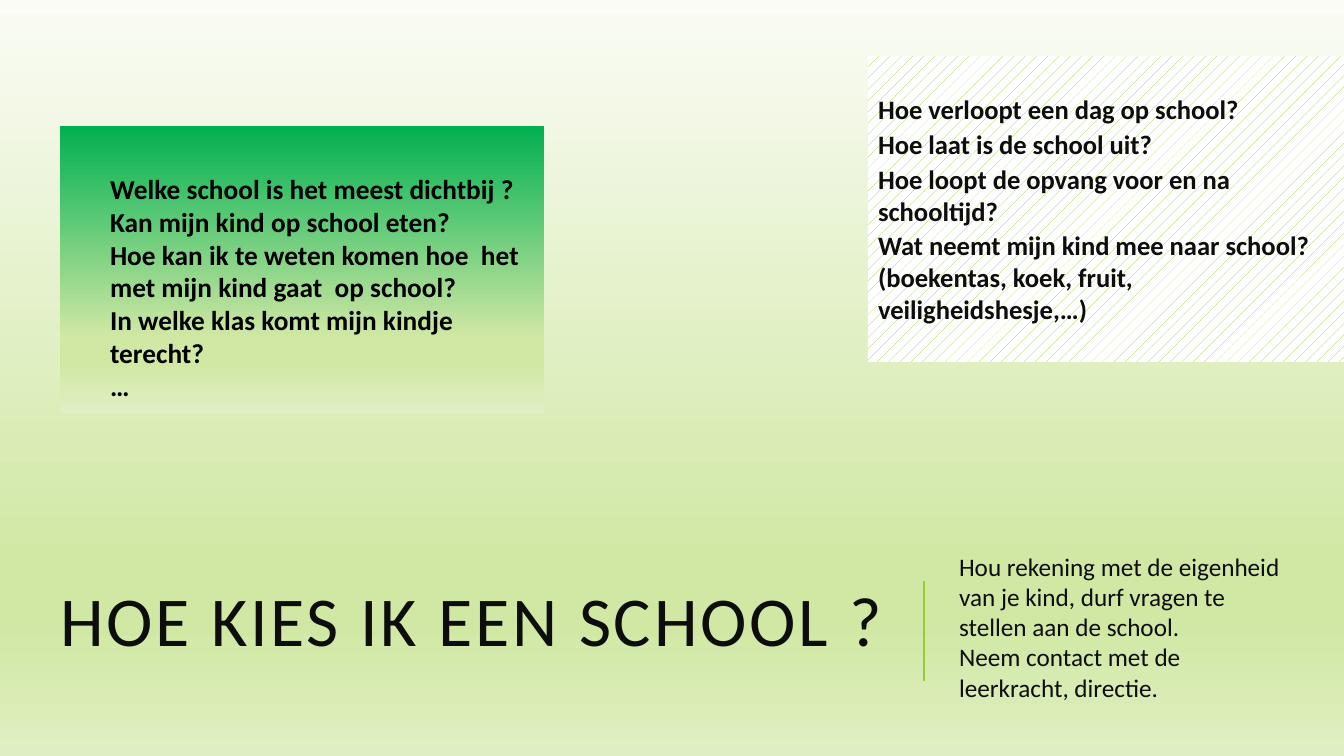
from dataclasses import dataclass

from pptx import Presentation
from pptx.dml.color import RGBColor
from pptx.enum.dml import MSO_PATTERN
from pptx.enum.shapes import MSO_CONNECTOR
from pptx.enum.text import MSO_ANCHOR, MSO_AUTO_SIZE, PP_ALIGN
from pptx.oxml.ns import qn
from pptx.util import Emu, Pt
from lxml.etree import SubElement


@dataclass(frozen=True)
class Theme:
    face: str = "Calibri"
    ink: str = "0D0D0D"
    black: str = "000000"
    lime: str = "99CB38"
    white: str = "FFFFFF"
    pale: str = "FAFCF5"
    green: str = "00B050"
    fade: tuple = ((74, "D1E8A5"), (83, "D1E8A5"), (100, "E0EFC3"))
    head: float = 50
    ask: float = 19.5
    day: float = 19
    note: float = 18


LOOK = Theme()


def px(count):
    return Emu(round(count * 914400 / 100.8))


def rgb(code):
    return RGBColor.from_string(code)


def apply(target, values):
    for name, value in values.items():
        setattr(target, name, value)


def shade(fill, root, top):
    """Vertical gradient from the top colour into the shared fade."""
    fill.gradient()
    fill.gradient_angle = 270
    stops = next(root.iter(qn("a:gsLst")))
    for old in list(stops):
        stops.remove(old)
    for place, code in ((0, top), *LOOK.fade):
        stop = SubElement(stops, qn("a:gs"), pos=str(place * 1000))
        SubElement(stop, qn("a:srgbClr"), val=code)


def write(holder, box, lines, size, color=LOOK.ink, bold=False, after=2,
          lead=1.0, inset=None):
    """Place a placeholder in its box and fill it with plain paragraphs."""
    apply(holder, dict(zip(("left", "top", "width", "height"), map(px, box))))
    frame = holder.text_frame
    frame.text = "\n".join(lines)
    apply(frame, {"word_wrap": True, "auto_size": MSO_AUTO_SIZE.NONE,
                  "vertical_anchor": MSO_ANCHOR.MIDDLE})
    apply(frame, inset or {})
    for para in frame.paragraphs:
        props = para._p.get_or_add_pPr()
        apply_indent = {"marL": "0", "indent": "0"}
        for name, value in apply_indent.items():
            props.set(name, value)
        SubElement(props, qn("a:buNone"))
        apply(para, {"alignment": PP_ALIGN.LEFT, "line_spacing": lead,
                     "space_before": Pt(0), "space_after": Pt(after)})
        for run in para.runs:
            apply(run.font, {"name": LOOK.face, "size": Pt(size), "bold": bold})
            run.font.color.rgb = rgb(color)


def banner(slide, title, note, box):
    """Title, divider and advice along the bottom."""
    left, top, width, height = box
    write(title, (left, top, 857, height), ["HOE KIES IK EEN SCHOOL ?"],
          LOOK.head, after=0, lead=0.8)
    for run in title.text_frame.paragraphs[0].runs:
        run._r.get_or_add_rPr().set("spc", "200")
    write(note, (left + width - 353, top, 353, height),
          ["Hou rekening met de eigenheid van je kind, durf vragen te stellen "
           "aan de school.\vNeem contact met de leerkracht, directie."],
          LOOK.note)

    # Divider
    mid = left + 874
    rule = slide.shapes.add_connector(
        MSO_CONNECTOR.STRAIGHT, px(mid), px(top + 135), px(mid), px(top + 35))
    rule.line.color.rgb = rgb(LOOK.lime)
    rule.line.width = Pt(1.5)
    SubElement(rule._element.spPr, qn("a:effectLst"))


def choice(holder, box):
    """Questions about choosing, on a green fade."""
    write(holder, box,
          ["Welke school is het meest dichtbij ?",
           "Kan mijn kind op school eten?",
           "Hoe kan ik te weten komen hoe  het met mijn kind gaat  op school?",
           "In welke klas komt mijn kindje terecht?",
           "…"],
          LOOK.ask, LOOK.black, True, after=0,
          inset={"margin_left": px(50), "margin_top": px(40),
                 "margin_right": px(5), "margin_bottom": px(5)})
    shade(holder.fill, holder._element, LOOK.green)


def routine(holder, box):
    """Questions about the school day, on a pattern."""
    write(holder, box,
          ["Hoe verloopt een dag op school?",
           "Hoe laat is de school uit?",
           "Hoe loopt de opvang voor en na schooltijd?",
           "Wat neemt mijn kind mee naar school? "
           "(boekentas, koek, fruit, veiligheidshesje,…)"],
          LOOK.day, bold=True)
    fill = holder.fill
    fill.patterned()
    fill.pattern = MSO_PATTERN.PERCENT_10
    fill.fore_color.rgb = rgb(LOOK.lime)
    fill.back_color.rgb = rgb(LOOK.white)


def main():
    deck = Presentation()
    apply(deck, {"slide_width": px(1344), "slide_height": px(756)})
    slide = deck.slides.add_slide(deck.slide_layouts.get_by_name("Comparison"))
    shade(slide.background.fill, slide.element, LOOK.pale)

    # Template parts: title, advice, left list, spare heading, right list
    title, note, left, spare, right = slide.placeholders
    spare._element.getparent().remove(spare._element)

    banner(slide, title, note, (50, 546, 1252, 161))
    choice(left, (60, 126, 484, 287))
    routine(right, (868, 56, 484, 306))
    deck.save("out.pptx")


if __name__ == "__main__":
    main()
